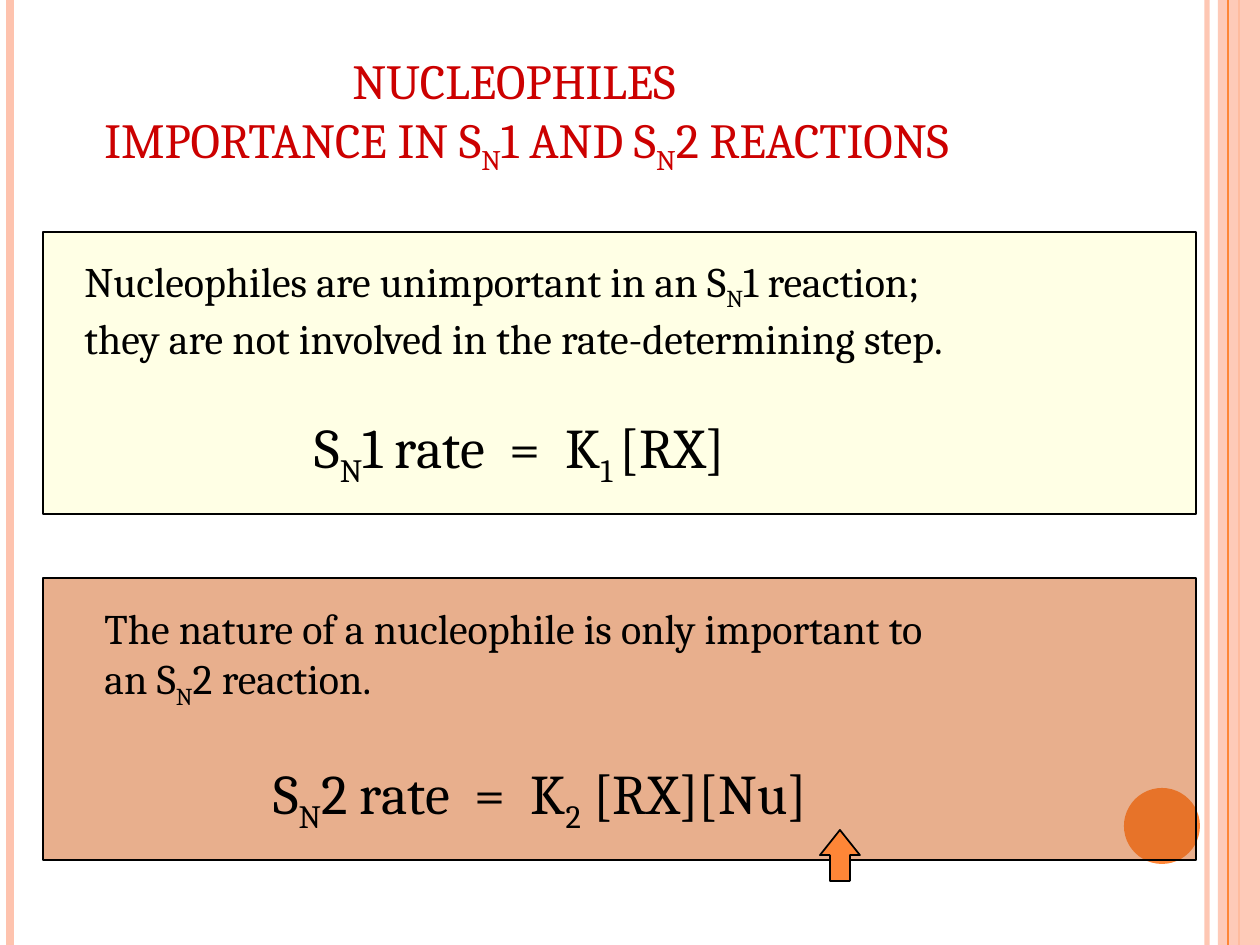
from lxml.etree import SubElement
from pptx import Presentation
from pptx.dml.color import RGBColor
from pptx.enum.shapes import MSO_CONNECTOR, MSO_SHAPE as SHAPE
from pptx.oxml.ns import qn
from pptx.util import Emu, Pt

W, H = 1260, 945
EMU_PER_PX = 914400 / 126
FONT = "Cambria"
PINK, ORANGE, BLACK, RED = "FEC3AE", "FE8637", "000000", "CC0000"

# x, colour, width in pt, opacity in %
STRIPES_BELOW = [(1207, PINK, 3, 93), (10, PINK, 4.5, 100), (1239, ORANGE, 1.5, 100)]
STRIPES_ABOVE = [(1228, ORANGE, 0.75, 100)]

# shape, box, fill, opacity in %, outlined
BAND = (SHAPE.RECTANGLE, (1218, 0, 42, H), PINK, 87, False)
DISC = (SHAPE.OVAL, (1124, 788, 76, 76), ORANGE, 100, False)
SN2_PANEL = (SHAPE.RECTANGLE, (43, 578, 1153, 282), "D2611C", 50, True)
SN1_PANEL = (SHAPE.RECTANGLE, (43, 232, 1153, 282), "FFFFCC", 50, True)
ARROW = (SHAPE.UP_ARROW, (820, 830, 40, 51), ORANGE, 100, True)

# box, size in pt, colour, lines of (indent, text); _x_ marks a subscript
TEXTS = [
    ((72, 249, 1038, 113), 24, BLACK,
     [(0, "Nucleophiles are unimportant in an S_N_1 reaction;"),
      (0, "they are not involved in the rate-determining step.")]),
    ((302, 406, 524, 79), 32, BLACK, [(0, "S_N_1 rate  =  K_1 _[RX]")]),
    ((92, 596, 979, 113), 24, BLACK,
     [(0, "The nature of a nucleophile is only important to"),
      (0, "an S_N_2 reaction.")]),
    ((261, 752, 645, 79), 32, BLACK, [(0, "S_N_2 rate  =  K_2_ [RX][Nu]")]),
    ((92, 44, 1051, 130), 28, RED,
     [(248, "NUCLEOPHILES"),
      (0, "IMPORTANCE IN S_N_1 AND S_N_2 REACTIONS")]),
]


def px(n):
    return Emu(round(n * EMU_PER_PX))


def rgb(value):
    return RGBColor.from_string(value)


def paint(fill, color, opacity):
    fill.solid()
    fill.fore_color.rgb = rgb(color)
    if opacity < 100:
        clr = fill._xPr.find(qn("a:solidFill"))[0]
        SubElement(clr, qn("a:alpha"), val=str(opacity * 1000))


def add_stripe(s, x, color, width, opacity):
    c = s.shapes.add_connector(MSO_CONNECTOR.STRAIGHT, px(x), 0, px(x), px(H))
    c.line.width = Pt(width)
    paint(c.line.fill, color, opacity)
    SubElement(c._element.spPr, qn("a:effectLst"))


def add_shape(s, kind, box, color, opacity, outlined):
    sp = s.shapes.add_shape(kind, *map(px, box))
    sp.shadow.inherit = False
    paint(sp.fill, color, opacity)
    if outlined:
        sp.line.color.rgb = rgb(BLACK)
        sp.line.width = Pt(1)
    else:
        sp.line.fill.background()
    return sp


def add_text(s, box, size, color, lines):
    tf = s.shapes.add_textbox(*map(px, box)).text_frame
    tf.word_wrap = True
    look = {"name": FONT, "size": Pt(size)}
    for i, (indent, line) in enumerate(lines):
        p = tf.add_paragraph() if i else tf.paragraphs[0]
        if indent:
            p._p.get_or_add_pPr().set("marL", str(px(indent)))
        for j, part in enumerate(line.split("_")):
            r = p.add_run()
            r.text = part
            for key, value in look.items():
                setattr(r.font, key, value)
            r.font.color.rgb = rgb(color)
            if j % 2:
                r._r.get_or_add_rPr().set("baseline", "-25000")


def main():
    prs = Presentation()
    prs.slide_width, prs.slide_height = px(W), px(H)
    s = prs.slides.add_slide(prs.slide_layouts[6])
    for stripe in STRIPES_BELOW:
        add_stripe(s, *stripe)
    add_shape(s, *BAND)
    for stripe in STRIPES_ABOVE:
        add_stripe(s, *stripe)
    for shape in (DISC, SN2_PANEL, SN1_PANEL):
        add_shape(s, *shape)
    for text in TEXTS:
        add_text(s, *text)
    arrow = add_shape(s, *ARROW)
    arrow.adjustments[0], arrow.adjustments[1] = 0.5, 0.63
    prs.save("out.pptx")


if __name__ == "__main__":
    main()
